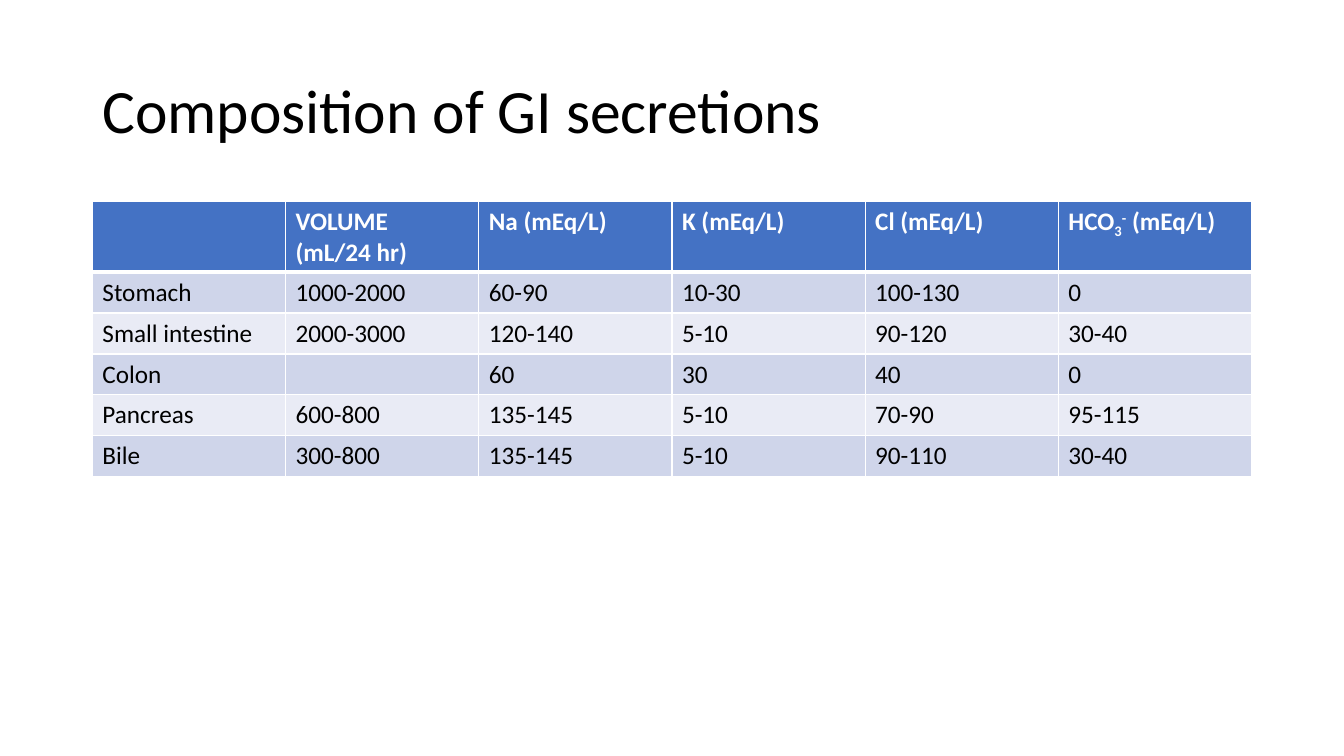
from dataclasses import dataclass

from lxml.etree import SubElement
from pptx import Presentation
from pptx.dml.color import RGBColor
from pptx.enum.text import MSO_ANCHOR
from pptx.oxml.ns import qn
from pptx.util import Pt


@dataclass(frozen=True)
class Theme:
    font: str = "Calibri"
    title_size: int = 44
    table_size: int = 18
    ink: str = "000000"
    white: str = "FFFFFF"
    header: str = "4472C4"
    bands: tuple = ("CFD5EA", "E9EBF5")


theme = Theme()


def style_font(font, size, color, bold=False):
    font.name = theme.font
    font.size = Pt(size)
    font.bold = bold
    font.color.rgb = RGBColor.from_string(color)


def add_border(cell, side, width):
    line = SubElement(cell._tc.get_or_add_tcPr(), qn(f"a:{side}"), w=str(Pt(width)))
    fill = SubElement(line, qn("a:solidFill"))
    SubElement(fill, qn("a:srgbClr"), val=theme.white)


deck = Presentation()
deck.slide_width, deck.slide_height = Pt(960), Pt(540)
page = deck.slides.add_slide(deck.slide_layouts[6])

# Title
title_box = page.shapes.add_textbox(Pt(66), Pt(28.75), Pt(828), Pt(104.4))
title_frame = title_box.text_frame
title_frame.word_wrap = True
title_frame.vertical_anchor = MSO_ANCHOR.MIDDLE
title_frame.text = "Composition of GI secretions"
title_para = title_frame.paragraphs[0]
title_para.line_spacing = 0.9
style_font(title_para.runs[0].font, theme.title_size, theme.ink)

# Table of secretions
secretions = [
    ["", "VOLUME (mL/24 hr)", "Na (mEq/L)", "K (mEq/L)", "Cl (mEq/L)", "HCO"],
    ["Stomach", "1000-2000", "60-90", "10-30", "100-130", "0"],
    ["Small intestine", "2000-3000", "120-140", "5-10", "90-120", "30-40"],
    ["Colon", "", "60", "30", "40", "0"],
    ["Pancreas", "600-800", "135-145", "5-10", "70-90", "95-115"],
    ["Bile", "300-800", "135-145", "5-10", "90-110", "30-40"],
]
row_count, column_count = len(secretions), len(secretions[0])
table = page.shapes.add_table(
    row_count, column_count, Pt(66), Pt(144), Pt(828), Pt(29.2 * row_count)
).table

for row, values in enumerate(secretions):
    is_header = row == 0
    fill_color = theme.header if is_header else theme.bands[(row - 1) % 2]
    text_color = theme.white if is_header else theme.ink
    for column, value in enumerate(values):
        cell = table.cell(row, column)
        para = cell.text_frame.paragraphs[0]
        para.text = value
        style_font(para.font, theme.table_size, text_color, is_header)
        for span in para.runs:
            style_font(span.font, theme.table_size, text_color, is_header)
        # Borders come before the fill in the cell properties
        add_border(cell, "lnL", 1)
        add_border(cell, "lnR", 1)
        add_border(cell, "lnT", 3 if row == 1 else 1)
        add_border(cell, "lnB", 3 if is_header else 1)
        cell.fill.solid()
        cell.fill.fore_color.rgb = RGBColor.from_string(fill_color)

# Subscript and superscript of the bicarbonate heading
bicarbonate = table.cell(0, column_count - 1).text_frame.paragraphs[0]
for text, baseline in [("3", -25), ("-", 30), (" (mEq/L)", 0)]:
    span = bicarbonate.add_run()
    span.text = text
    style_font(span.font, theme.table_size, theme.white, True)
    span._r.get_or_add_rPr().set("baseline", str(baseline * 1000))

deck.save("out.pptx")
